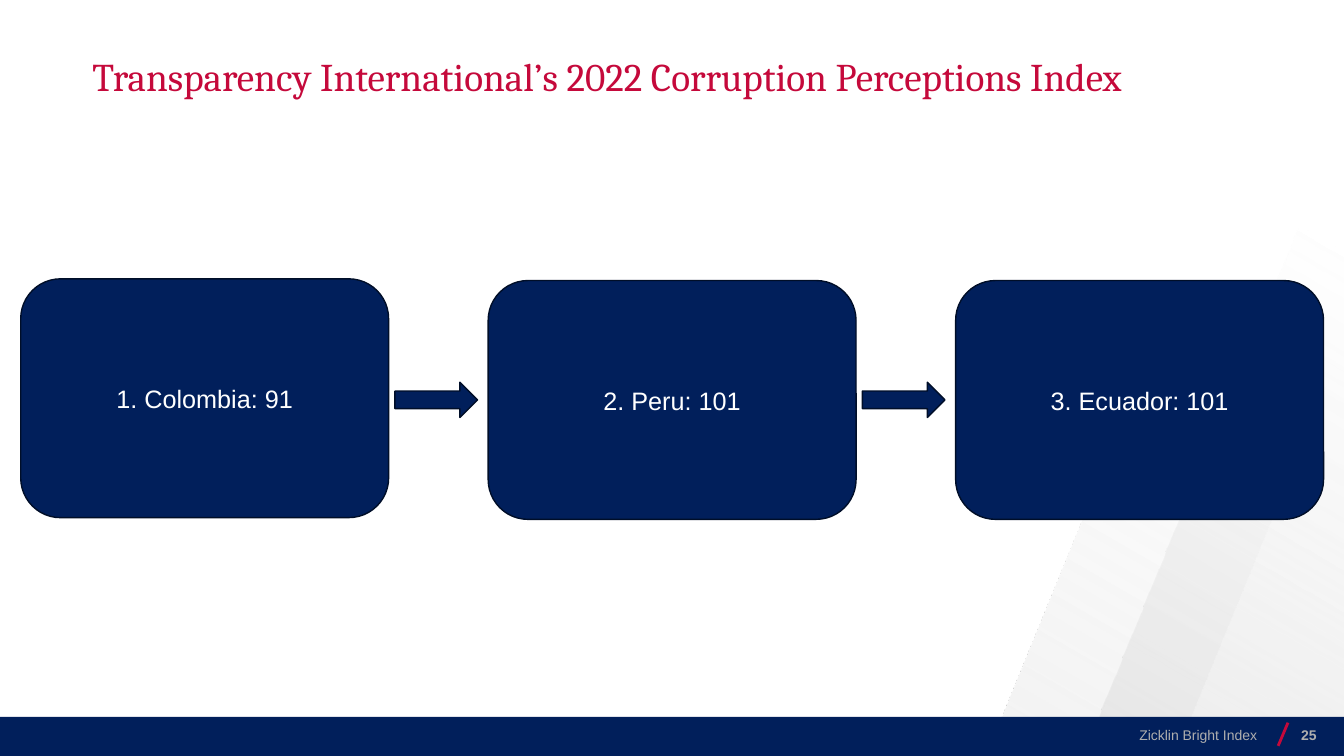
"""Builds a slide that ranks three countries by their corruption index."""
from dataclasses import dataclass

from lxml import etree
from pptx import Presentation
from pptx.dml.color import RGBColor as Rgb
from pptx.enum.shapes import MSO_CONNECTOR as Line, MSO_SHAPE as Kind
from pptx.enum.text import MSO_ANCHOR as Anchor, MSO_AUTO_SIZE as Fit, PP_ALIGN as Align
from pptx.oxml import parse_xml
from pptx.oxml.ns import nsdecls, qn
from pptx.util import Pt


@dataclass(frozen=True)
class Theme:
    navy: str = "011F5B"
    edge: str = "000E28"
    red: str = "C5093B"
    white: str = "FFFFFF"
    muted: str = "AFAFAF"
    pale: str = "F2F2F2"
    grey: str = "D9D9D9"
    head: str = "Cambria"
    body: str = "Arial"
    big: int = 28
    mid: int = 18
    small: int = 10


def write(frame, text, font, size, color, align, bold=False, anchor=Anchor.MIDDLE):
    frame.word_wrap = True
    frame.vertical_anchor = anchor
    para = frame.paragraphs[0]
    para.text = text
    para.alignment = align
    face = para.font
    face.name, face.size, face.bold = font, Pt(size), bold
    face.color.rgb = Rgb.from_string(color)
    return para


class Deck:
    def __init__(self, theme):
        self.theme = theme
        self.file = Presentation()
        self.file.slide_width, self.file.slide_height = Pt(960), Pt(540)
        self.slide = self.file.slides.add_slide(self.file.slide_layouts[5])
        self.shapes = self.slide.shapes

    def shape(self, kind, box, fill, edge=None):
        item = self.shapes.add_shape(kind, *map(Pt, box))
        item.shadow.inherit = False
        item.fill.solid()
        item.fill.fore_color.rgb = Rgb.from_string(fill)
        if edge:
            item.line.color.rgb = Rgb.from_string(edge)
            item.line.width = Pt(1)
        else:
            item.line.fill.background()
        return item

    def band(self, box, color, start, end):
        item = self.shape(Kind.PARALLELOGRAM, box, color)
        item.rotation = 180
        item.adjustments[0] = 0.522
        stops = "".join(
            f'<a:gs pos="{pos * 1000}"><a:srgbClr val="{color}">'
            f'<a:alpha val="{alpha * 1000}"/></a:srgbClr></a:gs>'
            for pos, alpha in ((start, 0), (100, end)))
        fade = parse_xml(
            f'<a:gradFill {nsdecls("a")} rotWithShape="1"><a:gsLst>{stops}</a:gsLst>'
            f'<a:lin ang="{300 * 60000}" scaled="0"/></a:gradFill>')
        solid = item.element.spPr.find(qn("a:solidFill"))
        solid.getparent().replace(solid, fade)

    def slash(self, start, end):
        item = self.shapes.add_connector(Line.STRAIGHT, *map(Pt, start + end))
        item.line.color.rgb = Rgb.from_string(self.theme.red)
        item.line.width = Pt(2)
        etree.SubElement(item.element.spPr, qn("a:effectLst"))

    def title(self, text, box):
        item = self.shapes.title
        item.left, item.top, item.width, item.height = map(Pt, box)
        item.element.getparent().append(item.element)
        frame = item.text_frame
        frame.auto_size = Fit.NONE
        frame.margin_left = frame.margin_right = 0
        frame.margin_top = frame.margin_bottom = Pt(3.6)
        look = self.theme
        para = write(frame, text, look.head, look.big, look.red, Align.LEFT,
                     anchor=Anchor.TOP)
        para.line_spacing = 0.9

    def note(self, text, box, bold=False):
        item = self.shapes.add_textbox(*map(Pt, box))
        look = self.theme
        write(item.text_frame, text, look.body, look.small, look.muted, Align.RIGHT, bold)

    def card(self, text, box):
        look = self.theme
        item = self.shape(Kind.ROUNDED_RECTANGLE, box, look.navy, look.edge)
        write(item.text_frame, text, look.body, look.mid, look.white, Align.CENTER)

    def arrow(self, box):
        self.shape(Kind.RIGHT_ARROW, box, self.theme.navy, self.theme.edge)


def main():
    look = Theme()
    deck = Deck(look)
    deck.band((703, 181.5, 282, 361), look.pale, 20, 100)
    deck.band((772, -2, 425.5, 545), look.grey, 40, 50)
    deck.shape(Kind.RECTANGLE, (0, 512, 960, 28), look.navy)
    deck.slash((913, 532.8), (920, 516.2))
    deck.title("Transparency International’s 2022 Corruption Perceptions Index",
               (66, 37.5, 828, 38))
    deck.note("Zicklin Bright Index", (581, 510.5, 324, 29))
    deck.note("25", (908.5, 510.5, 39, 29), bold=True)

    left, step, wide, high = 14.8, 333.9, 262.8, 170.6
    ranks = (("1. Colombia: 91", 199.2), ("2. Peru: 101", 200.4), ("3. Ecuador: 101", 200.4))
    for i, (text, top) in enumerate(ranks):
        x = left + i * step
        deck.card(text, (x, top, wide, high))
        if i < len(ranks) - 1:
            deck.arrow((x + wide + 4.5, 273, 59, 25.2))
    deck.file.save("out.pptx")


if __name__ == "__main__":
    main()
